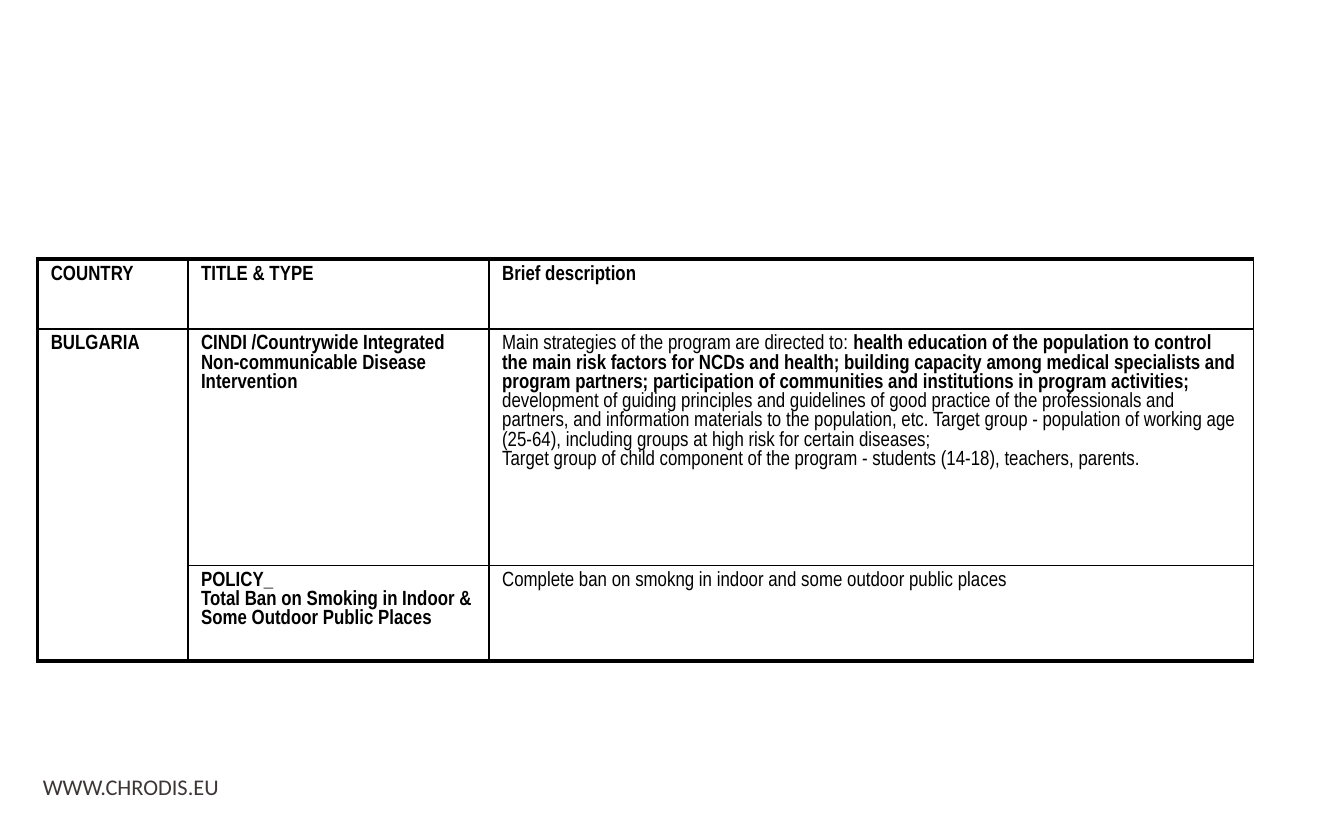
from collections import namedtuple

from lxml.etree import SubElement
from pptx import Presentation
from pptx.dml.color import RGBColor
from pptx.oxml.ns import qn
from pptx.util import Cm, Pt

Theme = namedtuple("Theme", "ink grey face foot size small thin thick")
theme = Theme(
    ink=RGBColor(0, 0, 0), grey=RGBColor(0x3C, 0x36, 0x36),
    face="Arial Narrow", foot="Calibri", size=Pt(11), small=Pt(12),
    thin=Pt(1), thick=Pt(2.25),
)


def style(font, face, size, color):
    font.name, font.size = face, size
    font.color.rgb = color


def edge(cell, side, width):
    """Draw one side (L, R, T or B) of a cell border."""
    line = SubElement(cell._tc.get_or_add_tcPr(), qn(f"a:ln{side}"), w=str(width))
    fill = SubElement(line, qn("a:solidFill"))
    SubElement(fill, qn("a:srgbClr"), val=str(theme.ink))


deck = Presentation()
deck.slide_width, deck.slide_height = Cm(25.4), Cm(15.8)
slide = deck.slides.add_slide(deck.slide_layouts[6])

# Footer
box = slide.shapes.add_textbox(Cm(0.56), Cm(14.48), Cm(6.86), Cm(0.76))
box.text_frame.word_wrap = True
para = box.text_frame.paragraphs[0]
para.text = "WWW.CHRODIS.EU"
style(para.font, theme.foot, theme.small, theme.grey)

# Each cell is a list of (text, bold) runs; a newline is a line break
cells = [
    [
        [("COUNTRY", True)],
        [("TITLE & TYPE", True)],
        [("Brief description", True)],
    ],
    [
        [("BULGARIA", True)],
        [("CINDI /Countrywide Integrated Non-communicable Disease Intervention", True)],
        [
            ("Main strategies of the program are directed to: ", False),
            ("health education of the population to control the main risk factors "
             "for NCDs and health; building capacity among medical specialists and "
             "program partners; participation of communities and institutions in "
             "program activities; ", True),
            ("development of guiding principles and guidelines of good practice of "
             "the professionals and partners, and information materials to the "
             "population, etc. Target group - population of working age (25-64), "
             "including groups at high risk for certain diseases; \n"
             "Target group of child component of the program - students (14-18), "
             "teachers, parents.", False),
        ],
    ],
    [
        [],
        [("POLICY_ \nTotal Ban on Smoking in Indoor & Some Outdoor Public Places", True)],
        [("Complete ban on smokng in indoor and some outdoor public places", False)],
    ],
]
widths = [Cm(2.84), Cm(5.69), Cm(14.45)]
heights = [Cm(1.32), Cm(4.47), Cm(1.8)]

# Table
table = slide.shapes.add_table(
    len(heights), len(widths), Cm(0.71), Cm(4.9), sum(widths), sum(heights)
).table
table.first_row = table.horz_banding = False
for col, width in zip(table.columns, widths):
    col.width = width
for row, height in zip(table.rows, heights):
    row.height = height
table.cell(1, 0).merge(table.cell(2, 0))

last = len(heights) - 1
for y, row in enumerate(cells):
    for x, runs in enumerate(row):
        cell = table.cell(y, x)
        cell.margin_left = cell.margin_right = Cm(0.25)
        cell.margin_top = cell.margin_bottom = Cm(0.11)

        # The frame is thick on the left, top and bottom
        low = y == last or (x == 0 and y > 0)
        edge(cell, "L", theme.thick if x == 0 else theme.thin)
        edge(cell, "R", theme.thin)
        edge(cell, "T", theme.thick if y == 0 else theme.thin)
        edge(cell, "B", theme.thick if low else theme.thin)
        cell.fill.background()

        para = cell.text_frame.paragraphs[0]
        style(para.font, theme.face, theme.size, theme.ink)
        for text, bold in runs:
            for i, part in enumerate(text.split("\n")):
                if i:
                    para.add_line_break()
                run = para.add_run()
                run.text = part
                style(run.font, theme.face, theme.size, theme.ink)
                run.font.bold = bold

deck.save("out.pptx")
